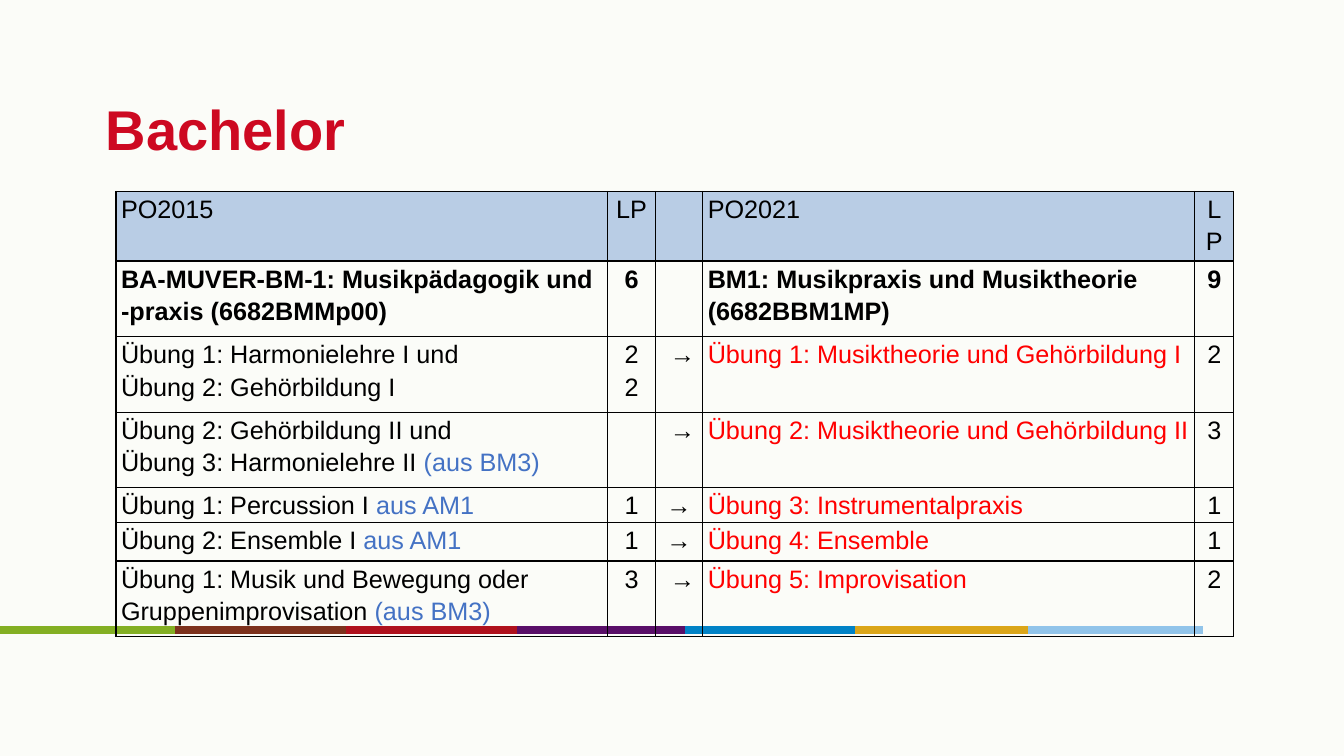
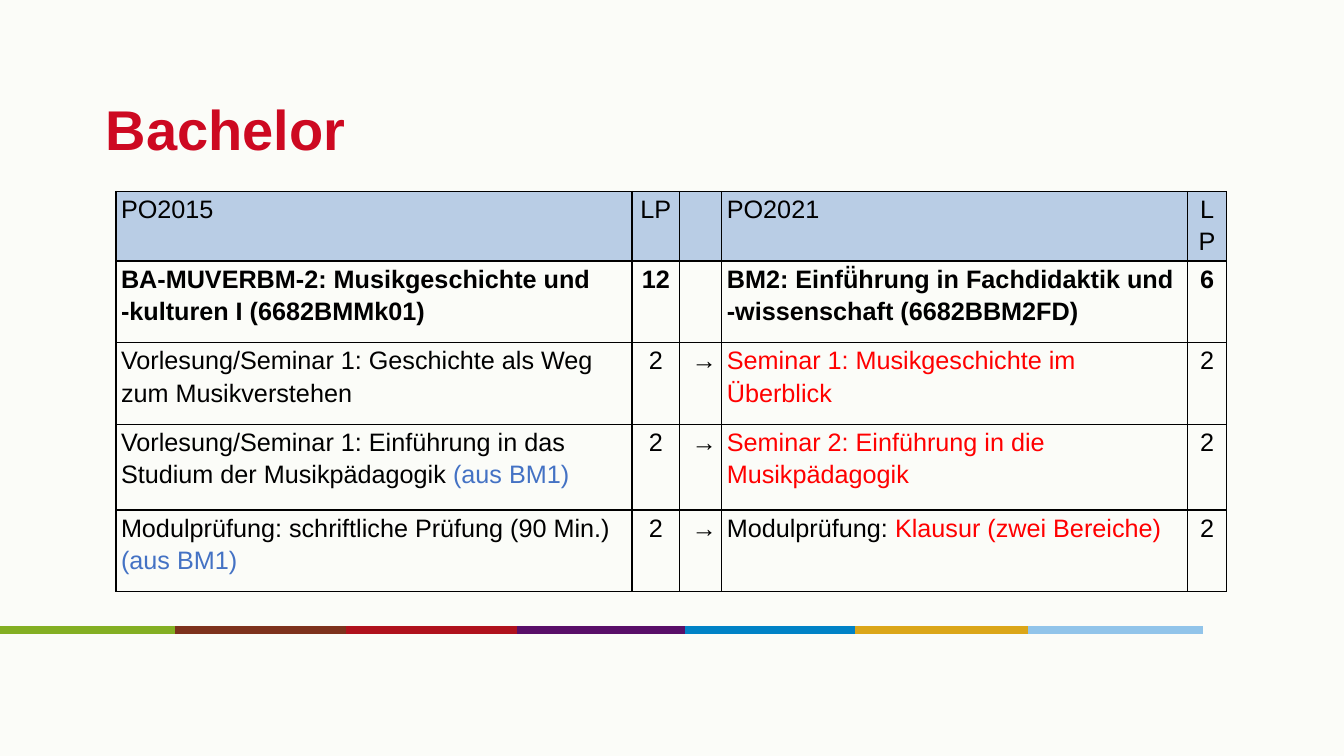
from lxml.etree import SubElement
from pptx import Presentation
from pptx.dml.color import RGBColor
from pptx.enum.shapes import MSO_CONNECTOR
from pptx.enum.text import MSO_ANCHOR, PP_ALIGN
from pptx.oxml.ns import qn
from pptx.util import Inches, Pt

FONT = "Arial"
BACKGROUND, BLACK, TITLE_RED = "FBFCF8", "000000", "CD0921"
HEADER_FILL, ORIGIN_BLUE, NEW_RED = "B9CDE5", "4472C4", "FF0000"

# Footer band: left end (percent of slide width) and colour of each segment
BAND_TOP, SEGMENT_WIDTH = 83.33, 13
BAND = [
    (0, "83AF23"), (13.05, "7D321D"), (25.73, "AF111D"), (38.48, "590F68"),
    (51, "0082C6"), (63.6, "DBA619"), (76.5, "91C4EA"),
]

# Table columns: old module, credits, arrow, new module, credits.
# Text after "|" takes the accent colour of its column.
ACCENTS = {0: ORIGIN_BLUE, 3: NEW_RED}
LEFT_ALIGNED = (0, 3)
HEADER = ("PO2015", "LP", "", "PO2021", "LP")

# Column widths and row heights are percentages of the slide's size
MODULES = [
    {
        "columns": [36.6, 3.53, 3.53, 36.6, 2.92],
        "heights": [5.07, 10, 10, 10, 4.53, 5.07, 10],
        "rows": [
            HEADER,
            ("BA-MUVER-BM-1: Musikpädagogik und -praxis (6682BMMp00)", "6", "",
             "BM1: Musikpraxis und Musiktheorie (6682BBM1MP)", "9"),
            ("Übung 1: Harmonielehre I und\nÜbung 2: Gehörbildung I", "2\n2", " →",
             "|Übung 1: Musiktheorie und Gehörbildung I", "2"),
            ("Übung 2: Gehörbildung II und\nÜbung 3: Harmonielehre II |(aus BM3)", "", " →",
             "|Übung 2: Musiktheorie und Gehörbildung II", "3"),
            ("Übung 1: Percussion I |aus AM1", "1", "→",
             "|Übung 3: Instrumentalpraxis", "1"),
            ("Übung 2: Ensemble I |aus AM1", "1", "→",
             "|Übung 4: Ensemble", "1"),
            ("Übung 1: Musik und Bewegung oder Gruppenimprovisation |(aus BM3)", "3", " →",
             "|Übung 5: Improvisation", "2"),
        ],
    },
    {
        "columns": [38.4, 3.53, 3.15, 34.65, 2.92],
        "heights": [4.67, 10.8, 10.8, 11.33, 10.8],
        "rows": [
            HEADER,
            ("BA-MUVERBM-2: Musikgeschichte und -kulturen I (6682BMMk01)", "12", "",
             "BM2: Einfü̈hrung in Fachdidaktik und -wissenschaft (6682BBM2FD)", "6"),
            ("Vorlesung/Seminar 1: Geschichte als Weg zum Musikverstehen", "2", " →",
             "|Seminar 1: Musikgeschichte im Überblick", "2"),
            ("Vorlesung/Seminar 1: Einführung in das Studium der Musikpädagogik |(aus BM1)",
             "2", " →", "|Seminar 2: Einführung in die Musikpädagogik", "2"),
            ("Modulprüfung: schriftliche Prüfung (90 Min.) |(aus BM1)", "2", " →",
             "Modulprüfung: |Klausur (zwei Bereiche)", "2"),
        ],
    },
]


def share(percent, whole):
    return round(whole * percent / 100)


def paint(target, color, size=None, bold=False):
    """Colour a fill, a line or a font; a size marks a font."""
    if size:
        target.name, target.size, target.bold = FONT, Pt(size), bold
        target.color.rgb = RGBColor.from_string(color)
    else:
        target.solid()
        target.fore_color.rgb = RGBColor.from_string(color)


presentation = Presentation()
presentation.slide_width, presentation.slide_height = Inches(13.33), Inches(7.5)
width, height = presentation.slide_width, presentation.slide_height
blank = presentation.slide_layouts[6]
paint(presentation.slide_master.background.fill, BACKGROUND)

for module in MODULES:
    slide = presentation.slides.add_slide(blank)

    # Coloured band
    band_y = share(BAND_TOP, height)
    for start, color in BAND:
        segment = slide.shapes.add_connector(
            MSO_CONNECTOR.STRAIGHT, share(start, width), band_y,
            share(start + SEGMENT_WIDTH, width), band_y)
        paint(segment.line.fill, color)
        segment.line.width = Pt(5.5)
        SubElement(segment._element.spPr, qn("a:effectLst"))

    # Title
    title = slide.shapes.add_textbox(
        share(7.5, width), share(8.67, height), share(85, width), share(16.67, height))
    text_frame = title.text_frame
    text_frame.word_wrap = True
    text_frame.vertical_anchor = MSO_ANCHOR.MIDDLE
    text_frame.margin_left = text_frame.margin_right = Inches(0.05)
    text_frame.text = "Bachelor"
    paint(text_frame.paragraphs[0].runs[0].font, TITLE_RED, 40, True)

    # Comparison table
    columns, heights, rows = module["columns"], module["heights"], module["rows"]
    table = slide.shapes.add_table(
        len(rows), len(columns), share(8.63, width), share(25.33, height),
        share(sum(columns), width), share(sum(heights), height)).table
    table.first_row = table.horz_banding = False
    for column, percent in zip(table.columns, columns):
        column.width = share(percent, width)

    for row_index, texts in enumerate(rows):
        table.rows[row_index].height = share(heights[row_index], height)
        for column_index, text in enumerate(texts):
            cell = table.cell(row_index, column_index)
            cell.margin_left = cell.margin_right = Inches(0.05)
            cell.margin_top = cell.margin_bottom = 0

            # Borders come before the fill in the cell properties
            properties = cell._tc.get_or_add_tcPr()
            for side in ("lnL", "lnR", "lnT", "lnB"):
                border = SubElement(properties, qn(f"a:{side}"), w=str(Pt(1)))
                solid = SubElement(border, qn("a:solidFill"))
                SubElement(solid, qn("a:srgbClr"), val=BLACK)
            if row_index == 0:
                paint(cell.fill, HEADER_FILL)
            else:
                cell.fill.background()

            if not text:
                continue
            plain, _, accent = text.partition("|")
            paragraph = cell.text_frame.paragraphs[0]
            paragraph.text = plain
            paragraph.line_spacing = 1.15
            paragraph.space_after = Pt(10)
            paragraph.alignment = (
                PP_ALIGN.LEFT if column_index in LEFT_ALIGNED else PP_ALIGN.CENTER)
            for run in paragraph.runs:
                paint(run.font, BLACK, 18, row_index == 1)
            if accent:
                run = paragraph.add_run()
                run.text = accent
                paint(run.font, ACCENTS[column_index], 18)

presentation.save("out.pptx")
